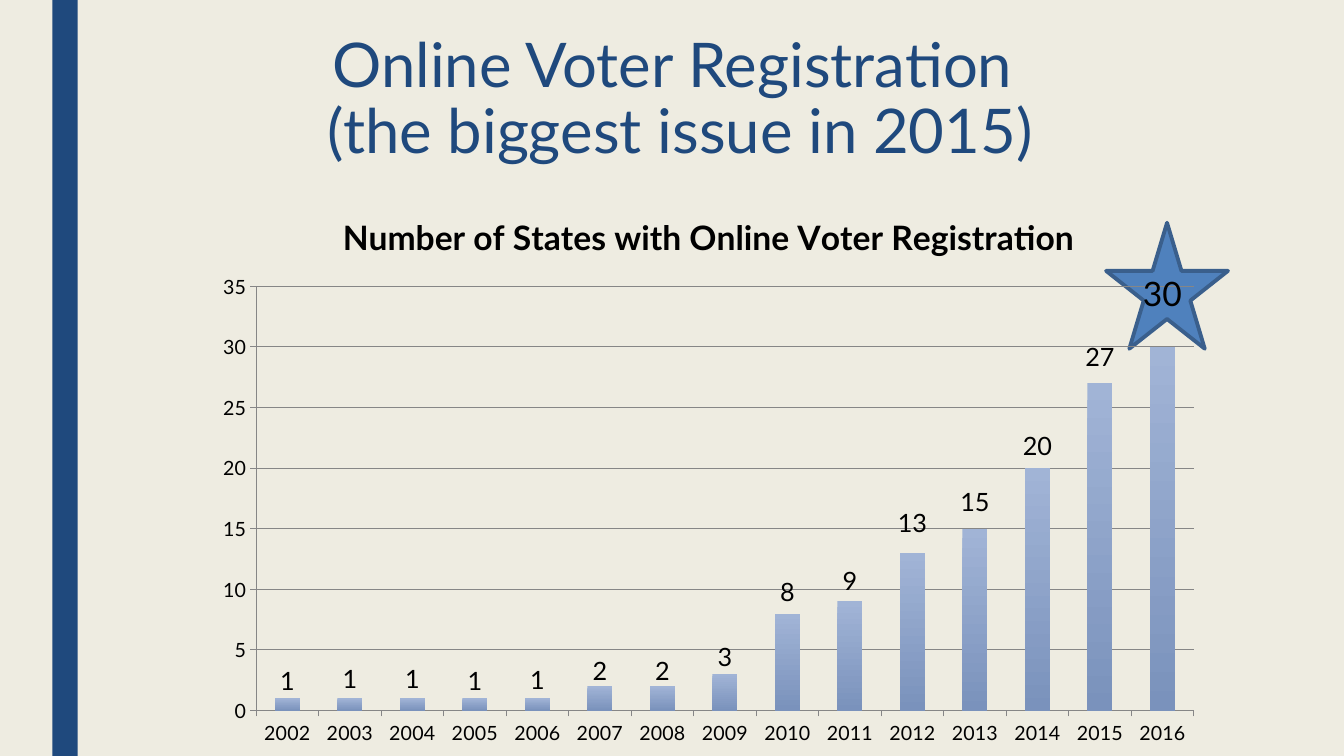
from lxml import etree
from pptx import Presentation
from pptx.chart.data import CategoryChartData as ChartData
from pptx.dml.color import RGBColor as RGB
from pptx.enum.chart import XL_CHART_TYPE as ChartType, XL_TICK_MARK as Tick
from pptx.enum.shapes import MSO_SHAPE as Preset
from pptx.enum.text import MSO_ANCHOR as Anchor, PP_ALIGN as Align
from pptx.oxml.ns import qn
from pptx.util import Inches, Pt

HEADING = "Online Voter Registration \v(the biggest issue in 2015)"
CHART_TITLE = "Number of States with Online Voter Registration"
FIRST_YEAR = 2002
STATES = [1, 1, 1, 1, 1, 2, 2, 3, 8, 9, 13, 15, 20, 27, 30]
# Height of each label's centre above its column, in inches
LABEL_LIFTS = [0.18, 0.2, 0.2, 0.18, 0.19, 0.16, 0.16, 0.18,
               0.22, 0.21, 0.3, 0.27, 0.22, 0.27, 0.53]
COLORS = {"background": "EEECE1", "navy": "1F497D", "star": "4F81BD",
          "star_line": "3A5F8C", "text": "000000", "axis": "868686",
          "column_top": "A1B4D6", "column_bottom": "7A92BC"}
FONT = "Lato"
CHART_BOX = (2.02, 1.94, 10.02, 5.56)
PLOT_BOX = (2.54, 2.84, 9.3, 4.21)
TITLE_AT = (3.34, 2.05)
AXIS_MAX = 35


def color(name):
    return RGB.from_string(COLORS[name])


def style(font, size, name="text", bold=False):
    for key, value in {"name": FONT, "size": Pt(size), "bold": bold}.items():
        setattr(font, key, value)
    font.color.rgb = color(name)


def add_preset(slide, preset, box, fill):
    shape = slide.shapes.add_shape(preset, *map(Inches, box))
    shape.shadow.inherit = False
    shape.fill.solid()
    shape.fill.fore_color.rgb = color(fill)
    shape.line.fill.background()
    return shape


def manual_layout(**values):
    """Build a c:layout element from fractions of the chart's size."""
    layout = etree.Element(qn("c:layout"))
    manual = etree.SubElement(layout, qn("c:manualLayout"))
    for tag, value in values.items():
        text = value if isinstance(value, str) else f"{value:.4f}"
        etree.SubElement(manual, qn(f"c:{tag}")).set("val", text)
    return layout


def place(parent, layout, index):
    for old in parent.findall(qn("c:layout")):
        parent.remove(old)
    parent.insert(index, layout)


def add_heading(slide):
    box = slide.shapes.add_textbox(*map(Inches, (1.5, 0.29, 10.5, 1.62)))
    frame = box.text_frame
    for key, value in {"word_wrap": True, "vertical_anchor": Anchor.MIDDLE,
                       "margin_bottom": Inches(0.25)}.items():
        setattr(frame, key, value)
    line = frame.paragraphs[0]
    line.text = HEADING
    line.alignment = Align.CENTER
    line.line_spacing = 0.89
    for run in line.runs:
        style(run.font, 44, "navy")


def format_axes(chart):
    for axis in (chart.category_axis, chart.value_axis):
        axis.major_tick_mark = Tick.OUTSIDE
        axis.minor_tick_mark = Tick.NONE
        style(axis.tick_labels.font, 14)
        axis.format.line.color.rgb = color("axis")
    values = chart.value_axis
    for key, value in {"minimum_scale": 0, "maximum_scale": AXIS_MAX,
                       "major_unit": 5, "has_major_gridlines": True}.items():
        setattr(values, key, value)
    values.major_gridlines.format.line.color.rgb = color("axis")
    values.tick_labels.number_format = "0"
    values.tick_labels.number_format_is_linked = False


def label_columns(series):
    """Move each label from its column's centre to above the column."""
    for i, count in enumerate(STATES):
        label = series.points[i].data_label
        if i == len(STATES) - 1:
            label.text_frame.text = str(count)
            style(label.text_frame.paragraphs[0].runs[0].font, 24)
        else:
            style(label.font, 18)
    labels = series.data_labels
    labels.show_value = True
    style(labels.font, 18)
    group = series._element.find(qn("c:dLbls"))
    for leader in group.findall(qn("c:showLeaderLines")):
        leader.set("val", "0")
    inches_per_state = PLOT_BOX[3] / AXIS_MAX
    elements = group.findall(qn("c:dLbl"))
    for element, count, lift in zip(elements, STATES, LABEL_LIFTS):
        rise = count * inches_per_state / 2 + lift
        place(element, manual_layout(x=0, y=-rise / CHART_BOX[3]), 1)


def add_states_chart(slide):
    data = ChartData(number_format="0")
    data.categories = [str(FIRST_YEAR + i) for i in range(len(STATES))]
    data.add_series("Series 1", STATES)
    chart = slide.shapes.add_chart(
        ChartType.COLUMN_STACKED, *map(Inches, CHART_BOX), data).chart
    chart.has_legend = False
    style(chart.font, 10)
    chart.has_title = True
    title = chart.chart_title
    title.text_frame.text = CHART_TITLE
    style(title.text_frame.paragraphs[0].runs[0].font, 24, bold=True)
    title.include_in_layout = False
    format_axes(chart)

    plot = chart.plots[0]
    for key, value in {"gap_width": 150, "overlap": 100,
                       "vary_by_categories": False}.items():
        setattr(plot, key, value)
    series = plot.series[0]
    fill = series.format.fill
    fill.gradient()
    fill.gradient_angle = 270
    for stop, name in zip(fill.gradient_stops, ("column_top", "column_bottom")):
        stop.color.rgb = color(name)
    label_columns(series)

    left, top, width, height = CHART_BOX
    x, y, w, h = PLOT_BOX
    inner = manual_layout(layoutTarget="inner", xMode="edge", yMode="edge",
                          x=(x - left) / width, y=(y - top) / height,
                          w=w / width, h=h / height)
    place(chart._chartSpace.chart.plotArea, inner, 0)
    title_x, title_y = TITLE_AT
    place(title._element,
          manual_layout(xMode="edge", yMode="edge", x=(title_x - left) / width,
                        y=(title_y - top) / height), 1)


def main():
    deck = Presentation()
    deck.slide_width, deck.slide_height = Inches(13.33), Inches(7.5)
    slide = deck.slides.add_slide(deck.slide_layouts[6])
    slide.background.fill.solid()
    slide.background.fill.fore_color.rgb = color("background")
    add_preset(slide, Preset.RECTANGLE, (0.52, 0, 0.25, 7.5), "navy")
    add_heading(slide)
    star = add_preset(slide, Preset.STAR_5_POINT, (10.97, 2.21, 1.21, 1.25), "star")
    star.line.color.rgb = color("star_line")
    star.line.width = Pt(2.75)
    add_states_chart(slide)
    deck.save("out.pptx")


if __name__ == "__main__":
    main()
